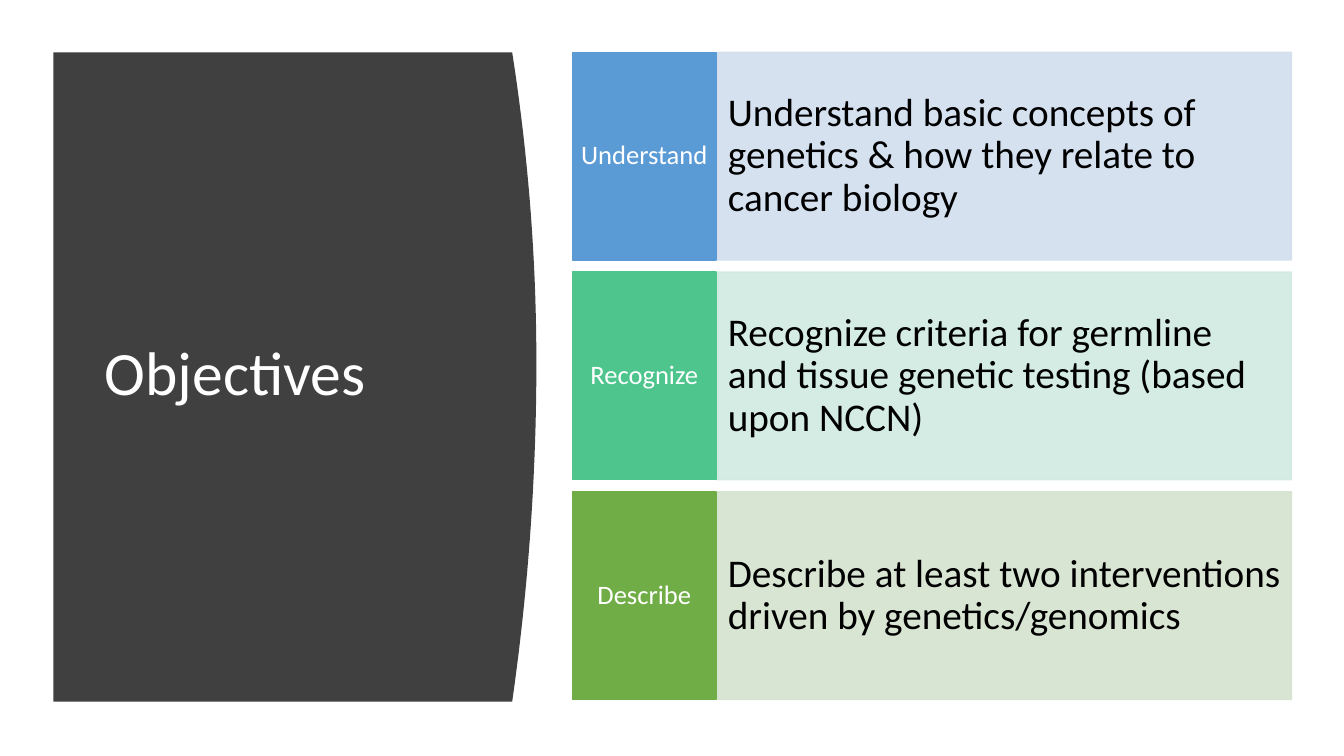
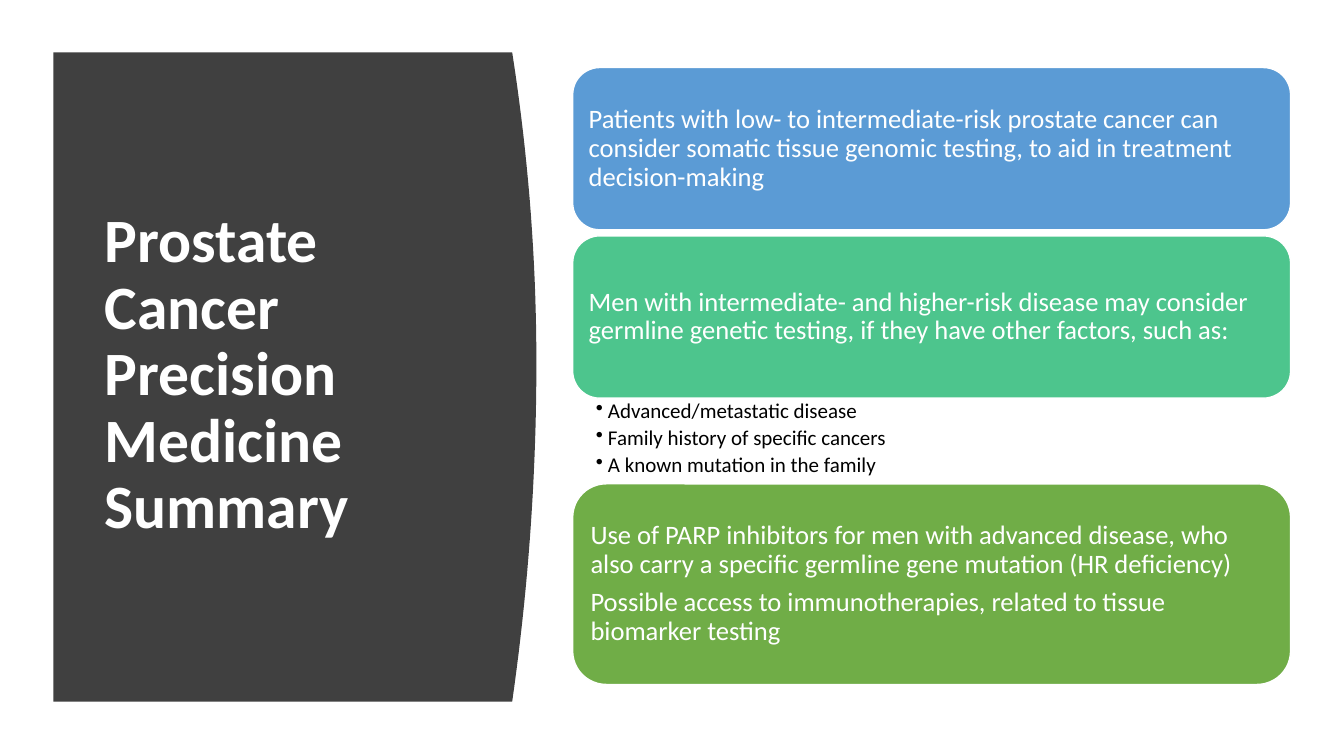
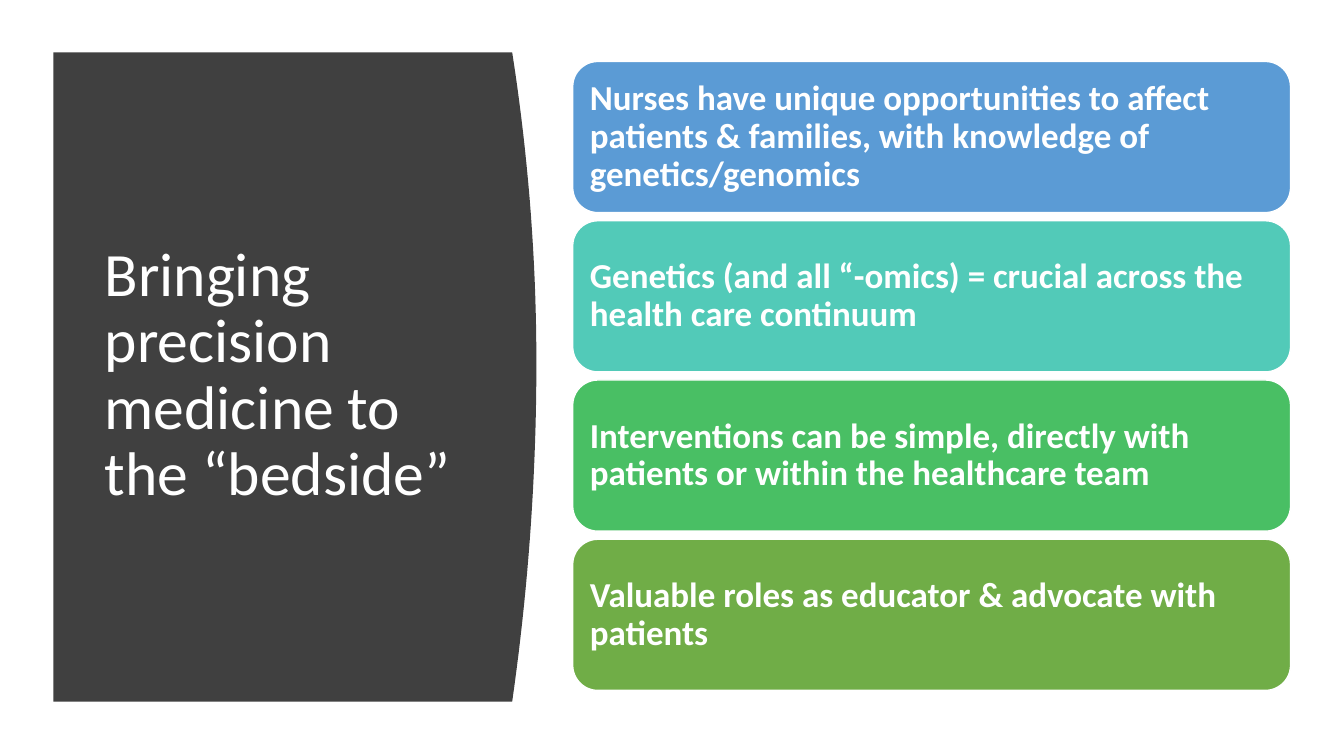
import pptx
import pptx.util
import pptx.dml.color
import pptx.enum.shapes
import pptx.enum.text
import pptx.oxml.ns
import lxml.etree

Inches = pptx.util.Inches
Pt = pptx.util.Pt
qn = pptx.oxml.ns.qn
Kind = pptx.enum.shapes.MSO_SHAPE
Align = pptx.enum.text.PP_ALIGN
Anchor = pptx.enum.text.MSO_ANCHOR

FONT = "Calibri"
WHITE, BLACK, DARK = "FFFFFF", "000000", "404040"
BLUE, MINT, GREEN = "5B9BD5", "4DC58D", "70AD47"
TEAL, LEAF = "52CAB8", "49BF64"
LEFT, WIDTH = 5.68, 7.12
TOP, TALL, PEAK = 0.52, 6.44, 3.6


def rgb(code):
    return pptx.dml.color.RGBColor.from_string(code)


def box(slide, place, lines, size, kind=None, fill=None, edge=WHITE, ink=WHITE,
        pad=(0.1, 0.05), bold=False, align=Align.LEFT, anchor=Anchor.MIDDLE, after=0.35):
    area = [Inches(side) for side in place]
    if kind is None:
        shape = slide.shapes.add_textbox(*area)
    else:
        shape = slide.shapes.add_shape(kind, *area)
        shape.shadow.inherit = False
        shape.fill.solid()
        shape.fill.fore_color.rgb = rgb(fill)
        shape.line.color.rgb = rgb(edge)
        shape.line.width = Pt(1)
    frame = shape.text_frame
    frame.word_wrap = True
    frame.vertical_anchor = anchor
    frame.margin_left = frame.margin_right = Inches(pad[0])
    frame.margin_top = frame.margin_bottom = Inches(pad[1])
    for row, line in enumerate(lines):
        para = frame.add_paragraph() if row else frame.paragraphs[0]
        para.alignment = align
        para.line_spacing = 0.9
        para.space_after = Pt(size * after)
        run = para.add_run()
        run.text = line
        run.font.name = FONT
        run.font.size = Pt(size)
        run.font.bold = bold
        run.font.color.rgb = rgb(ink)
    return shape


deck = pptx.Presentation()
deck.slide_width = Inches(13.33)
deck.slide_height = Inches(7.5)

titles = [
    ("Objectives", False),
    ("Prostate Cancer Precision Medicine Summary", True),
    ("Bringing precision medicine to the “bedside”", False),
]
curve = []
for step in range(41):
    y = TOP + TALL * step / 40
    half = PEAK - TOP if y < PEAK else TOP + TALL - PEAK
    x = 5.32 - 0.24 * ((y - PEAK) / half) ** 2
    curve.append((Inches(x), Inches(y)))
curve.append((Inches(0.53), Inches(TOP + TALL)))

slides = []
for title, bold in titles:
    slide = deck.slides.add_slide(deck.slide_layouts[6])
    pen = slide.shapes.build_freeform(Inches(0.53), Inches(TOP), scale=1.0)
    pen.add_line_segments(curve, close=True)
    panel = pen.convert_to_shape()
    panel.shadow.inherit = False
    panel.fill.solid()
    panel.fill.fore_color.rgb = rgb(DARK)
    panel.line.fill.background()
    box(slide, (0.94, 1.11, 3.74, 5.24), [title], 44, bold=bold, after=0)
    slides.append(slide)
goals, recap, bedside = slides

aims = [
    ("Understand", BLUE, "D2DEEF",
     "Understand basic concepts of genetics & how they relate to cancer biology"),
    ("Recognize", MINT, "D0EAE1",
     "Recognize criteria for germline and tissue genetic testing (based upon NCCN)"),
    ("Describe", GREEN, "D5E3CF",
     "Describe at least two interventions driven by genetics/genomics"),
]
for row, (verb, tone, tint, text) in enumerate(aims):
    top = TOP + 2.18 * row
    pale = box(goals, (7.11, top, 5.7, 2.06), [text], 28, Kind.RECTANGLE, tint, tint,
               BLACK, (0.11, 0.1))
    for color in pale.element.spPr.iter(qn("a:srgbClr")):
        lxml.etree.SubElement(color, qn("a:alpha")).set("val", "90000")
    box(goals, (LEFT, top, 1.42, 2.06), [verb], 19, Kind.RECTANGLE, tone, tone,
        pad=(0.08, 0.2), align=Align.CENTER)

cards = [
    (0.67, 1.61, BLUE, [
        "Patients with low- to intermediate-risk prostate cancer can consider somatic "
        "tissue genomic testing, to aid in treatment decision-making"]),
    (2.34, 1.61, MINT, [
        "Men with intermediate- and higher-risk disease may consider germline genetic "
        "testing, if they have other factors, such as:"]),
    (4.8, 1.99, GREEN, [
        "Use of PARP inhibitors for men with advanced disease, who also carry a specific "
        "germline gene mutation (HR deficiency)",
        "Possible access to immunotherapies, related to tissue biomarker testing"]),
]
for top, high, tone, lines in cards:
    box(recap, (LEFT, top, WIDTH, high), lines, 19, Kind.ROUNDED_RECTANGLE, tone,
        pad=(0.08, 0.08))

factors = ["Advanced/metastatic disease", "Family history of specific cancers",
           "A known mutation in the family"]
notes = box(recap, (LEFT, 3.94, WIDTH, 0.86), factors, 15, ink=BLACK, pad=(0.23, 0.03),
            anchor=Anchor.TOP, after=0.2)
for para in notes.text_frame.paragraphs:
    props = para._p.get_or_add_pPr()
    props.set("marL", str(Inches(0.12)))
    props.set("indent", str(Inches(-0.12)))
    lxml.etree.SubElement(props, qn("a:buChar")).set("char", "•")

roles = [
    (BLUE, "Nurses have unique opportunities to affect patients & families, "
           "with knowledge of genetics/genomics"),
    (TEAL, "Genetics (and all “-omics) = crucial across the health care continuum"),
    (LEAF, "Interventions can be simple, directly with patients or within the healthcare team"),
    (GREEN, "Valuable roles as educator & advocate with patients"),
]
for row, (tone, text) in enumerate(roles):
    box(bedside, (LEFT, 0.61 + 1.58 * row, WIDTH, 1.5), [text], 25,
        Kind.ROUNDED_RECTANGLE, tone, pad=(0.1, 0.1), bold=True)

deck.save("out.pptx")
